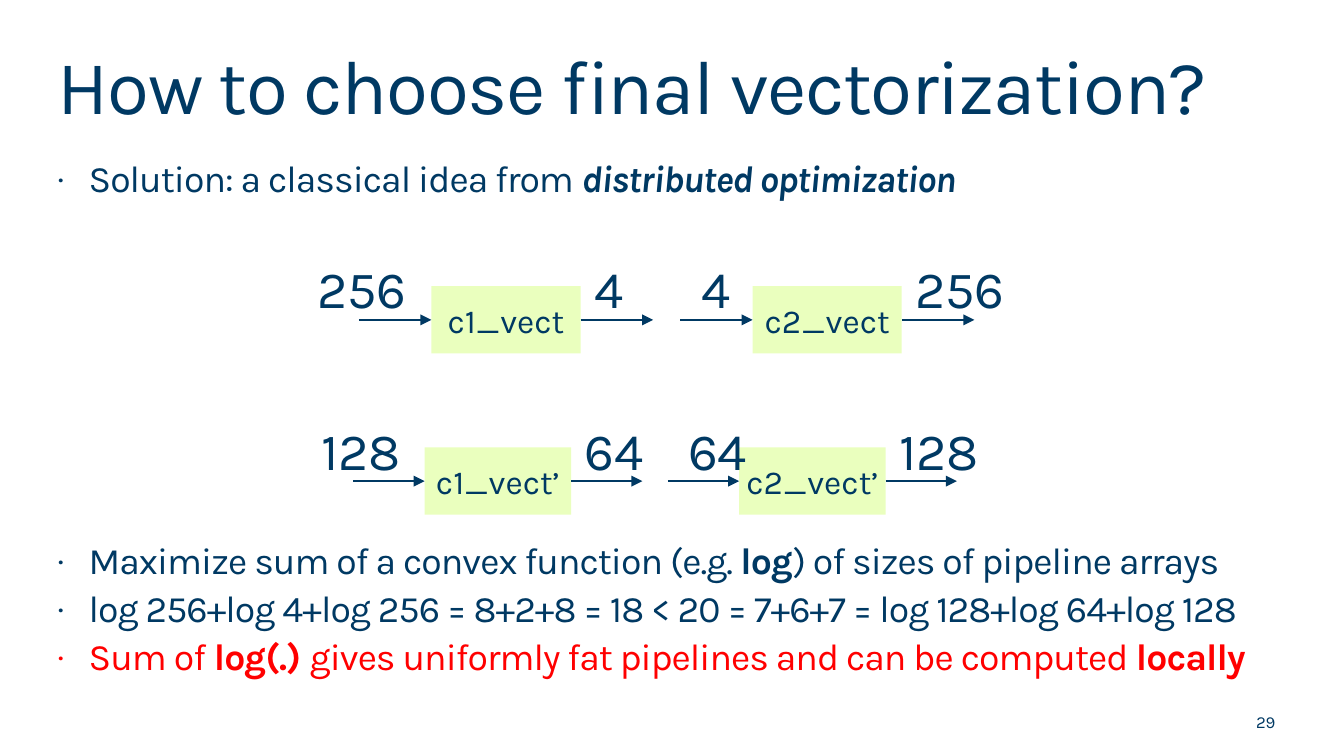
"""Build a slide on choosing the final vectorization of two pipeline stages."""
from lxml.etree import SubElement
from pptx import Presentation
from pptx.dml.color import RGBColor
from pptx.enum.shapes import MSO_CONNECTOR as CONNECTOR, MSO_SHAPE as SHAPE
from pptx.enum.text import MSO_ANCHOR as ANCHOR, PP_ALIGN as ALIGN
from pptx.oxml.ns import qn
from pptx.util import Inches, Pt

COLORS = {"navy": "003963", "lime": "EAFFBE", "red": "FF0000"}
FONT = "Karla"
STAGE_HEIGHT = 0.5
BULLETS = [
    ("navy", 0, [("Solution: a classical idea from ", ""),
                 ("distributed optimization", "bi")]),
    ("navy", 183.4, [("Maximize sum of a convex function (e.g. ", ""), ("log", "b"),
                     (") of sizes of pipeline arrays", "")]),
    ("navy", 4, [("log 256+log 4+log 256 = 8+2+8 = 18 < 20 = 7+6+7 = "
                  "log 128+log 64+log 128", "")]),
    ("red", 4, [("Sum of ", ""), ("log(.) ", "b"),
                ("gives uniformly fat pipelines and can be computed ", ""),
                ("locally", "b")]),
]
ROWS = [
    (2.13, 1.11, 0.54, [("c1_vect", 3.21, "256", 0.85, "4"),
                        ("c2_vect", 5.6, "4", 0.38, "256")]),
    (3.33, 1.09, 0.53, [("c1_vect’", 3.16, "128", 0.77, "64"),
                        ("c2_vect’", 5.5, "64", 0.38, "128")]),
]


def color(name):
    """Return the named colour."""
    return RGBColor.from_string(COLORS[name])


def style(paragraph, size, ink="navy"):
    """Set the font of a whole paragraph."""
    font = paragraph.font
    font.name, font.size, font.color.rgb = FONT, Pt(size), color(ink)


def set_insets(frame, across, down):
    """Set the inner margins of a text frame."""
    frame.margin_left = frame.margin_right = Inches(across)
    frame.margin_top = frame.margin_bottom = Inches(down)


def add_text(slide, left, top, width, height, text="", size=20, wrap=True):
    """Add a text box without margins and return its frame."""
    box = slide.shapes.add_textbox(*map(Inches, (left, top, width, height)))
    frame = box.text_frame
    frame.word_wrap = wrap
    set_insets(frame, 0, 0)
    frame.text = text
    style(frame.paragraphs[0], size)
    return frame


def add_title(slide, text):
    """Add the slide title with slightly tightened letters."""
    heading = add_text(slide, 0.43, 0.36, 9.15, 0.62, text, 41).paragraphs[0]
    heading.line_spacing = 0.9
    heading.runs[0].font._element.set("spc", "-75")


def add_bullets(slide, bullets):
    """Add the bulleted statements above and below the diagrams."""
    frame = add_text(slide, 0.43, 1.19, 9.15, 4.01)
    for index, (ink, gap, pieces) in enumerate(bullets):
        statement = frame.add_paragraph() if index else frame.paragraphs[0]
        style(statement, 20, ink)
        statement.line_spacing = 0.9
        statement.space_before = Pt(gap)
        props = statement._p.get_or_add_pPr()
        props.set("marL", str(Inches(0.23)))
        props.set("indent", str(Inches(-0.23)))
        marks = [("a:buSzPct", "val", "90000"), ("a:buFont", "typeface", FONT),
                 ("a:buChar", "char", "·")]
        for position, (tag, key, value) in enumerate(marks, start=2):
            mark = SubElement(props, qn(tag))
            mark.set(key, value)
            props.insert(position, mark)
        for text, emphasis in pieces:
            run = statement.add_run()
            run.text = text
            run.font.bold = "b" in emphasis
            run.font.italic = "i" in emphasis
            run.font._element.set("spc", "-53")


def add_stage(slide, name, left, top, width):
    """Add a pipeline stage rectangle."""
    stage = slide.shapes.add_shape(
        SHAPE.RECTANGLE, *map(Inches, (left, top, width, STAGE_HEIGHT)))
    stage.shadow.inherit = False
    stage.fill.solid()
    stage.fill.fore_color.rgb = color("lime")
    stage.line.fill.background()
    frame = stage.text_frame
    frame.text = name
    frame.word_wrap = False
    frame.vertical_anchor = ANCHOR.MIDDLE
    set_insets(frame, 0.05, 0.05)
    frame.paragraphs[0].alignment = ALIGN.CENTER
    style(frame.paragraphs[0], 18)
    return stage


def add_arrow(slide, start, end, y):
    """Add a horizontal arrow."""
    arrow = slide.shapes.add_connector(
        CONNECTOR.STRAIGHT, *map(Inches, (start, y, end, y)))
    arrow.line.color.rgb = color("navy")
    arrow.line.width = Pt(0.75)
    SubElement(arrow.line._get_or_add_ln(), qn("a:tailEnd")).set("type", "triangle")
    SubElement(arrow._element.spPr, qn("a:effectLst"))
    return arrow


def add_row(slide, top, width, reach, stages):
    """Add a row of stages with their input and output sizes."""
    middle = top + STAGE_HEIGHT / 2
    for name, left, size_in, offset, size_out in stages:
        right = left + width
        stage = add_stage(slide, name, left, top, width)
        for size, x in ((size_in, left - offset), (size_out, right + 0.1)):
            add_text(slide, x, top - 0.22, 0.25 * len(size), 0.47, size, 28, wrap=False)
        add_arrow(slide, left - reach, left, middle).end_connect(stage, 1)
        add_arrow(slide, right, right + reach, middle).begin_connect(stage, 3)


def add_page_number(slide, number):
    """Add the page number at the lower right."""
    frame = add_text(slide, 7.82, 5.26, 1.75, 0.22, number, 9)
    set_insets(frame, 0.08, 0.04)
    frame.vertical_anchor = ANCHOR.MIDDLE
    frame.paragraphs[0].alignment = ALIGN.RIGHT


def main():
    """Build and save the slide."""
    deck = Presentation()
    deck.slide_width, deck.slide_height = Inches(10), Inches(10 * 9 / 16)
    slide = deck.slides.add_slide(deck.slide_layouts[6])
    add_title(slide, "How to choose final vectorization?")
    add_bullets(slide, BULLETS)
    add_page_number(slide, "29")
    for row in ROWS:
        add_row(slide, *row)
    deck.save("out.pptx")


if __name__ == "__main__":
    main()
